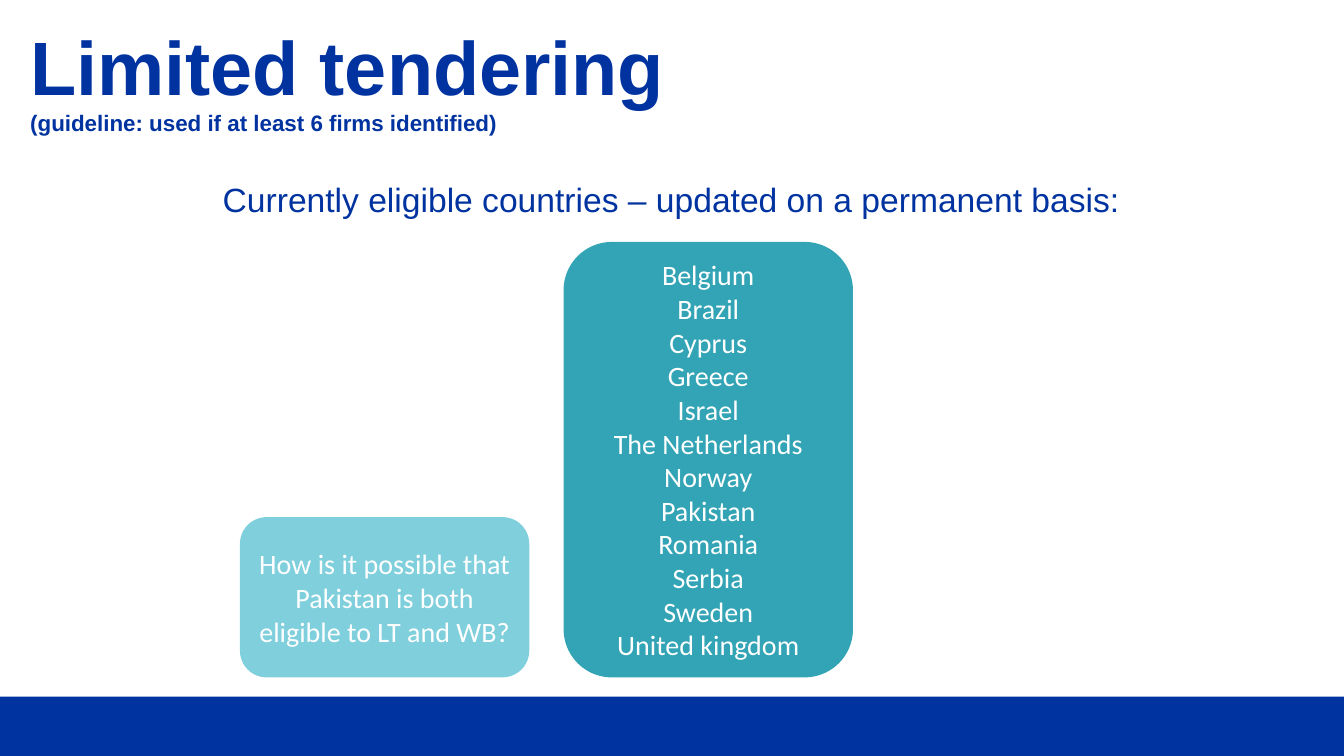
import pptx
import pptx.util
from pptx.dml.color import RGBColor
from pptx.enum.shapes import MSO_SHAPE
from pptx.enum.text import MSO_ANCHOR, PP_ALIGN
from pptx.util import Inches

COLORS = {"blue": "0033A0", "teal": "32A4B5", "light_teal": "80CFDC", "white": "FFFFFF"}


def add_run(p, text, size, font, color, bold=False):
    r = p.add_run()
    r.text = text
    r.font.size = pptx.util.Pt(size)
    r.font.name = font
    r.font.bold = bold
    r.font.color.rgb = RGBColor.from_string(COLORS[color])


def add_block(s, kind, left, top, width, height, color):
    """Add a filled shape without outline or shadow."""
    sp = s.shapes.add_shape(kind, Inches(left), Inches(top), Inches(width), Inches(height))
    sp.shadow.inherit = False
    sp.fill.solid()
    sp.fill.fore_color.rgb = RGBColor.from_string(COLORS[color])
    sp.line.fill.background()
    return sp


prs = pptx.Presentation()
prs.slide_width = Inches(13.33)
prs.slide_height = Inches(7.5)
s = prs.slides.add_slide(prs.slide_layouts[6])

# Footer band
add_block(s, MSO_SHAPE.RECTANGLE, 0, 6.91, 13.33, 0.59, "blue")

# Title and guideline
tf = s.shapes.add_textbox(Inches(0.3), Inches(0.3), Inches(8.62), Inches(1.45)).text_frame
tf.word_wrap = True
tf.margin_left = tf.margin_right = tf.margin_top = tf.margin_bottom = 0
p = tf.paragraphs[0]
p.line_spacing = 0.9
add_run(p, "Limited tendering", 54, "Arial", "blue", bold=True)
p.add_line_break()
add_run(p, "(guideline: used if at least 6 firms identified)", 16, "Arial", "blue", bold=True)

# Heading above the countries
tf = s.shapes.add_textbox(Inches(2.11), Inches(1.73), Inches(9.41), Inches(0.5)).text_frame
tf.word_wrap = True
p = tf.paragraphs[0]
p.alignment = PP_ALIGN.JUSTIFY
add_run(p, "Currently eligible countries – updated on a permanent basis:", 24, "Arial", "blue")

# Country list and question
countries = ["Belgium", "Brazil", "Cyprus", "Greece", "Israel", "The Netherlands Norway",
             "Pakistan", "Romania", "Serbia", "Sweden", "United kingdom"]
question = ["How is it possible that Pakistan is both eligible to LT and WB?"]
bottom = 6.72
for left, height, color, lines in [(5.59, 4.32, "teal", countries),
                                   (2.38, 1.59, "light_teal", question)]:
    sp = add_block(s, MSO_SHAPE.ROUNDED_RECTANGLE, left, bottom - height, 2.87, height, color)
    tf = sp.text_frame
    tf.word_wrap = True
    tf.vertical_anchor = MSO_ANCHOR.MIDDLE
    for i, line in enumerate(lines):
        p = tf.add_paragraph() if i else tf.paragraphs[0]
        p.alignment = PP_ALIGN.CENTER
        add_run(p, line, 20, "Calibri", "white")

prs.save("out.pptx")
